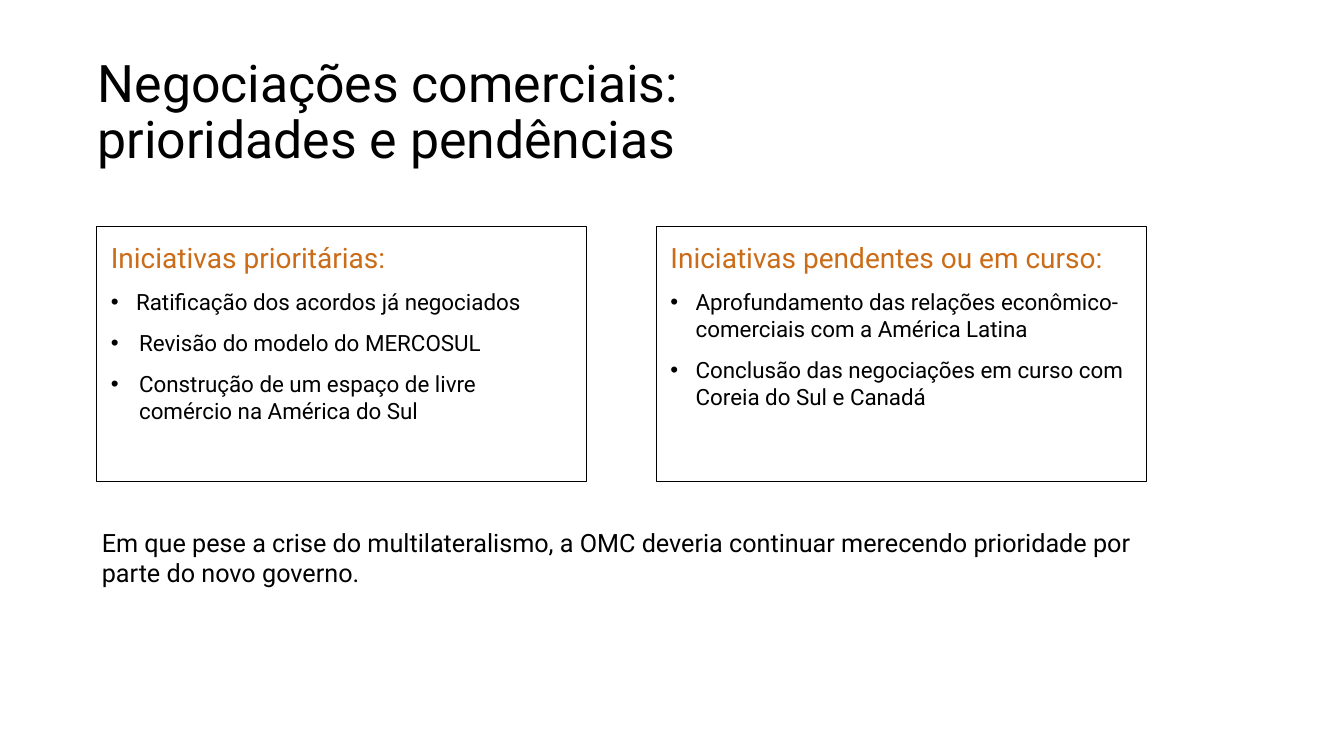
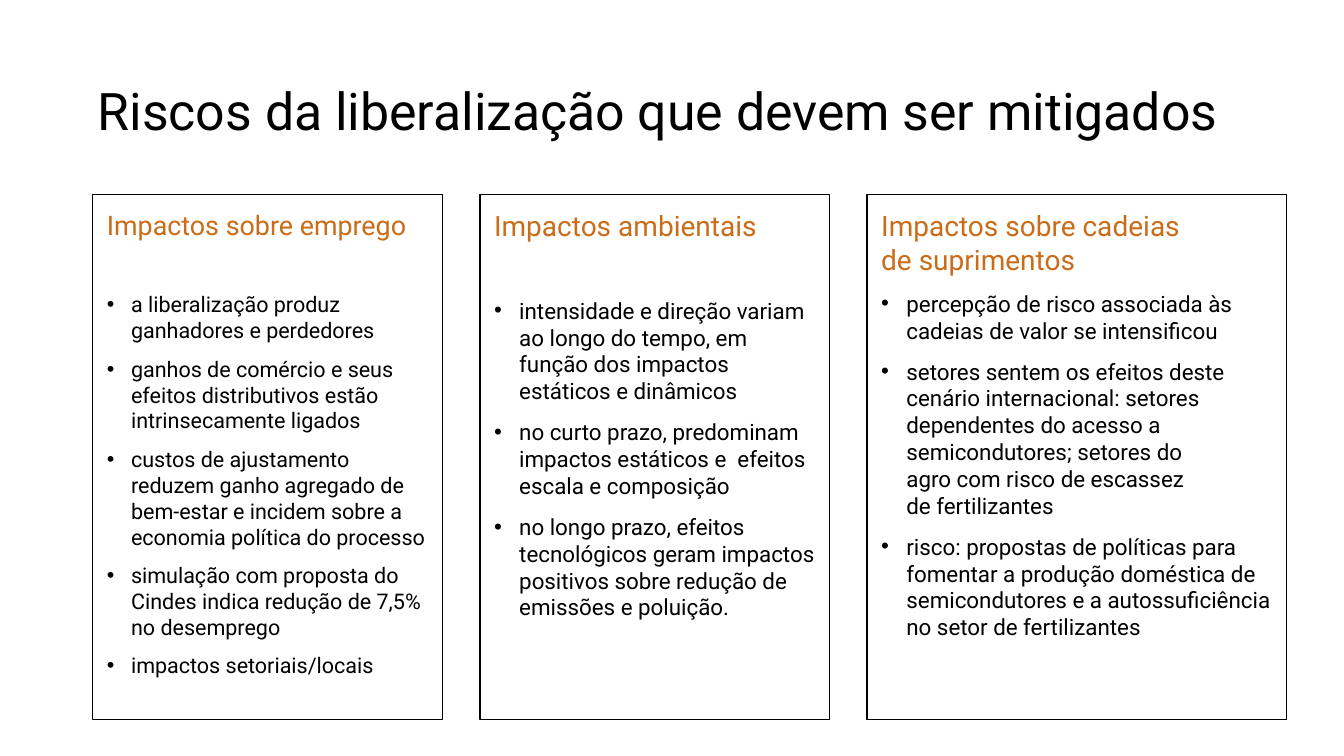
from dataclasses import dataclass
from itertools import repeat

from lxml import etree
from pptx import Presentation
from pptx.dml.color import RGBColor
from pptx.enum.shapes import MSO_SHAPE
from pptx.enum.text import MSO_ANCHOR, PP_ALIGN
from pptx.oxml.ns import qn
from pptx.util import Emu, Pt

EMU_PER_PX = 9144  # 100 px to the inch


def px(length):
    return Emu(length * EMU_PER_PX)


@dataclass(frozen=True)
class CardStyle:
    heading_size: float
    body_size: float
    space_before: int
    hanging: int


@dataclass(frozen=True)
class Theme:
    font: str = "Roboto"
    background: RGBColor = RGBColor(0xFF, 0xFF, 0xFF)
    ink: RGBColor = RGBColor(0x00, 0x00, 0x00)
    accent: RGBColor = RGBColor(0xCA, 0x6C, 0x18)
    title_size: int = 37
    title_spacing: float = 0.9
    note_size: int = 18
    border: int = 1
    text_inset: int = 5
    card_inset: int = 14
    regular: CardStyle = CardStyle(20, 16, 10, 25)
    compact: CardStyle = CardStyle(19.2, 15.4, 9, 24)


class Deck:
    """Holds the theme and the slide being built."""

    def __init__(self, theme):
        self.theme = theme
        self.presentation = Presentation()
        self.presentation.slide_width = px(1333)
        self.presentation.slide_height = px(750)
        self.slide = None

    def add_slide(self, title):
        blank = self.presentation.slide_layouts[6]
        self.slide = self.presentation.slides.add_slide(blank)
        fill = self.slide.background.fill
        fill.solid()
        fill.fore_color.rgb = self.theme.background
        paragraph = self.text(92, 40, 1200, 145, title, self.theme.title_size, MSO_ANCHOR.MIDDLE)
        paragraph.line_spacing = self.theme.title_spacing

    def text(self, left, top, width, height, text, size, anchor=MSO_ANCHOR.TOP):
        box = self.slide.shapes.add_textbox(px(left), px(top), px(width), px(height))
        self._prepare(box.text_frame, self.theme.text_inset, anchor)
        paragraph = box.text_frame.paragraphs[0]
        self._write(paragraph, text, size, self.theme.ink)
        return paragraph

    def card(self, left, top, width, height, heading, items, style=None, indents=None, heading_gap=None):
        """Outlined box with a heading and a bulleted list."""
        theme = self.theme
        style = style or theme.regular
        card = self.slide.shapes.add_shape(
            MSO_SHAPE.RECTANGLE, px(left), px(top), px(width), px(height)
        )
        card.shadow.inherit = False
        card.fill.background()
        card.line.color.rgb = theme.ink
        card.line.width = Pt(theme.border)
        frame = card.text_frame
        self._prepare(frame, theme.card_inset, MSO_ANCHOR.TOP)
        self._write(frame.paragraphs[0], heading, style.heading_size, theme.accent)

        space_before = heading_gap or style.space_before
        for item, indent in zip(items, indents or repeat(style.hanging)):
            paragraph = frame.add_paragraph()
            self._bullet(paragraph, indent)
            self._write(paragraph, item, style.body_size, theme.ink)
            paragraph.space_before = Pt(space_before)
            space_before = style.space_before

    def _prepare(self, frame, inset, anchor):
        frame.word_wrap = True
        frame.vertical_anchor = anchor
        frame.margin_left = frame.margin_right = px(inset)
        frame.margin_top = frame.margin_bottom = px(inset)

    def _bullet(self, paragraph, indent):
        properties = paragraph._p.get_or_add_pPr()
        properties.set("marL", str(px(indent)))
        properties.set("indent", str(-px(indent)))
        font = etree.SubElement(properties, qn("a:buFont"))
        font.set("typeface", "Arial")
        bullet = etree.SubElement(properties, qn("a:buChar"))
        bullet.set("char", "•")

    def _write(self, paragraph, text, size, color):
        paragraph.text = text
        paragraph.alignment = PP_ALIGN.LEFT
        for run in paragraph.runs:
            run.font.name = self.theme.font
            run.font.size = Pt(size)
            run.font.color.rgb = color


def add_negotiations(deck):
    deck.add_slide("Negociações comerciais:\nprioridades e pendências")
    left, top, width, height, gap = 96, 225, 486, 253, 69
    deck.card(
        left, top, width, height,
        "Iniciativas prioritárias:",
        [
            "Ratificação dos acordos já negociados",
            "Revisão do modelo do MERCOSUL",
            "Construção de um espaço de livre comércio na América do Sul",
        ],
        indents=(25, 28, 28),
    )
    deck.card(
        left + width + gap, top, width, height,
        "Iniciativas pendentes ou em curso:",
        [
            "Aprofundamento das relações econômico-comerciais com a América Latina",
            "Conclusão das negociações em curso com Coreia do Sul e Canadá",
        ],
    )
    deck.text(
        left, 518, 1040, 79,
        "Em que pese a crise do multilateralismo, a OMC deveria continuar "
        "merecendo prioridade por parte do novo governo.",
        deck.theme.note_size,
    )


def add_risks(deck):
    deck.add_slide("Riscos da liberalização que devem ser mitigados")
    left, top, width, height, gap = 92, 193, 347, 521, 37
    step = width + gap
    # One-line headings get a wider gap so the three lists start level
    deck.card(
        left, top, width, height,
        "Impactos sobre emprego",
        [
            "a liberalização produz ganhadores e perdedores",
            "ganhos de comércio e seus efeitos distributivos estão intrinsecamente ligados",
            "custos de ajustamento reduzem ganho agregado de bem-estar e incidem "
            "sobre a economia política do processo",
            "simulação com proposta do Cindes indica redução de 7,5% no desemprego",
            "impactos setoriais/locais",
        ],
        style=deck.theme.compact,
        heading_gap=36,
    )
    deck.card(
        left + step, top, width, height,
        "Impactos ambientais",
        [
            "intensidade e direção variam ao longo do tempo, em função dos "
            "impactos estáticos e dinâmicos",
            "no curto prazo, predominam impactos estáticos e  efeitos escala e composição",
            "no longo prazo, efeitos tecnológicos geram impactos positivos sobre "
            "redução de emissões e poluição.",
        ],
        heading_gap=39,
    )
    deck.card(
        left + 2 * step, top, 416, height,
        "Impactos sobre cadeias\nde suprimentos",
        [
            "percepção de risco associada às cadeias de valor se intensificou",
            "setores sentem os efeitos deste cenário internacional: setores "
            "dependentes do acesso a semicondutores; setores do\n"
            "agro com risco de escassez\nde fertilizantes",
            "risco: propostas de políticas para fomentar a produção doméstica de "
            "semicondutores e a autossuficiência no setor de fertilizantes",
        ],
    )


def main():
    deck = Deck(Theme())
    add_negotiations(deck)
    add_risks(deck)
    deck.presentation.save("out.pptx")


if __name__ == "__main__":
    main()
